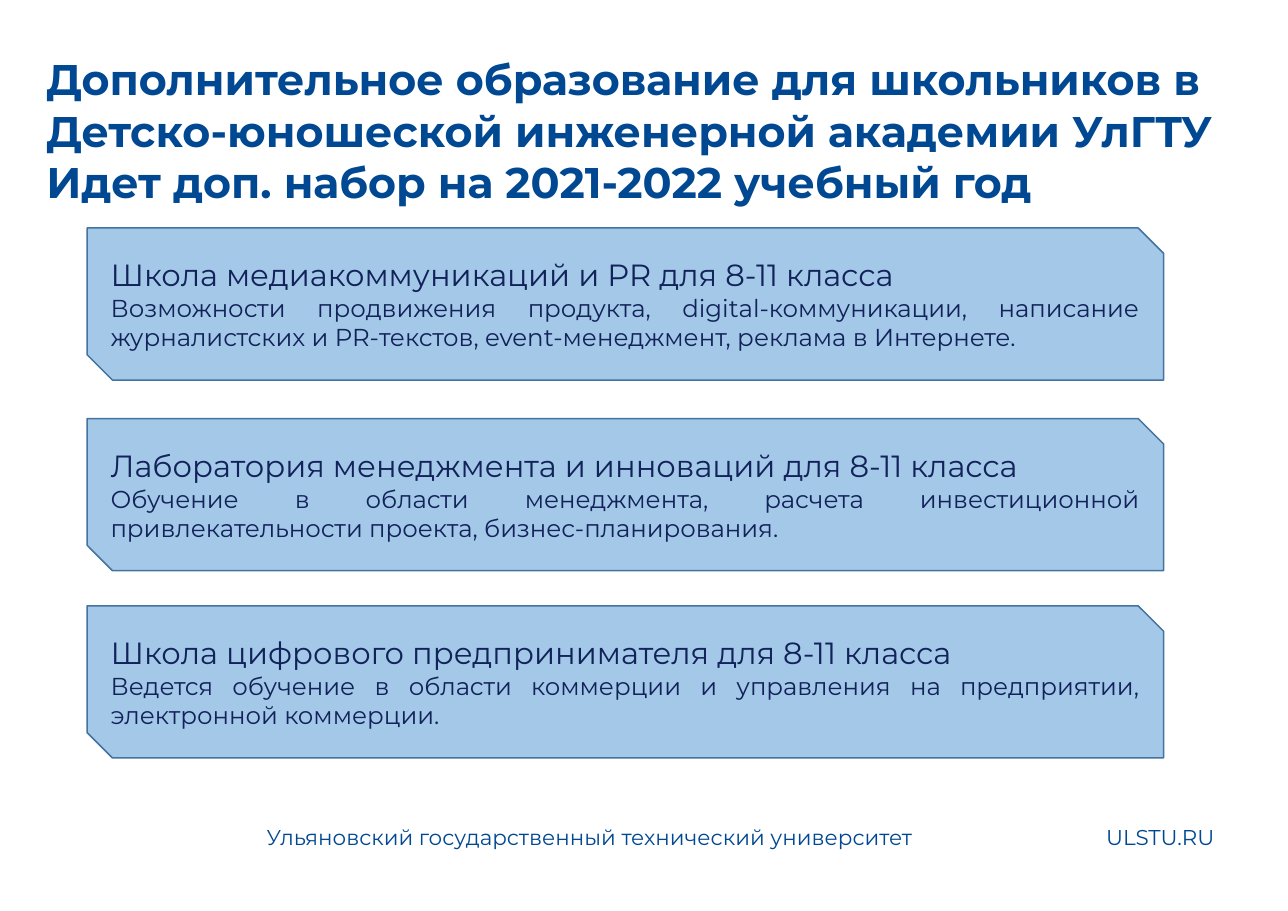
from dataclasses import dataclass

from lxml.etree import SubElement
from pptx import Presentation
from pptx.dml.color import RGBColor
from pptx.enum.shapes import MSO_SHAPE as Shape
from pptx.enum.text import MSO_ANCHOR as Anchor, MSO_AUTO_SIZE as Fit, PP_ALIGN as Align
from pptx.oxml.ns import qn
from pptx.util import Inches, Pt

TITLE = [
    "Дополнительное образование для школьников в Детско-юношеской инженерной академии УлГТУ",
    "Идет доп. набор на 2021-2022 учебный год",
]
# Top edge (percent of slide height), heading, description
CARDS = [
    (25.03, "Школа медиакоммуникаций и PR для 8-11 класса",
     "Возможности продвижения продукта, digital-коммуникации, написание "
     "журналистских и PR-текстов, event-менеджмент, реклама в Интернете."),
    (45.95, "Лаборатория менеджмента и инноваций для 8-11 класса",
     "Обучение в области менеджмента, расчета инвестиционной "
     "привлекательности проекта, бизнес-планирования."),
    (66.51, "Школа цифрового предпринимателя для 8-11 класса",
     "Ведется обучение в области коммерции и управления на предприятии, "
     "электронной коммерции."),
]
# Left edge and width (percent of slide width), text
FOOTER = [
    (19.85, 53.04, "Ульяновский государственный технический университет"),
    (85.03, 11.98, "ULSTU.RU"),
]


@dataclass(frozen=True)
class Theme:
    font: str = "Montserrat"
    brand: str = "004892"
    ink: str = "12225A"
    fill: str = "5B9BD5"
    edge: str = "43739E"
    alpha: int = 55
    title: int = 28
    head: int = 20
    body: int = 16
    foot: int = 14


theme = Theme()
deck = Presentation()
deck.slide_width, deck.slide_height = Inches(11.69), Inches(8.27)


def area(left, top, width, height):
    """Turn percentages of the slide into lengths."""
    wide, high = deck.slide_width / 100, deck.slide_height / 100
    return [int(n) for n in (left * wide, top * high, width * wide, height * high)]


def write(frame, text, size, color=theme.brand, bold=False, align=Align.LEFT, first=True):
    """Put one paragraph into a text frame, the first or a further one."""
    para = frame.paragraphs[0] if first else frame.add_paragraph()
    para.alignment = align
    run = para.add_run()
    run.text = text
    font = run.font
    font.name, font.size, font.bold = theme.font, Pt(size), bold
    font.color.rgb = RGBColor.from_string(color)


def add_title(slide):
    title = slide.shapes.title
    title.left, title.top, title.width, title.height = area(2.74, 5.2, 95.47, 30.35)
    frame = title.text_frame
    frame.word_wrap, frame.auto_size = True, Fit.NONE
    frame.vertical_anchor = Anchor.TOP
    for row, text in enumerate(TITLE):
        write(frame, text, theme.title, bold=True, first=row == 0)


def add_card(slide, top, head, body):
    card = slide.shapes.add_shape(Shape.SNIP_2_DIAG_RECTANGLE, *area(6.76, top, 83.58, 16.69))
    card.shadow.inherit = False
    card.fill.solid()
    card.fill.fore_color.rgb = RGBColor.from_string(theme.fill)
    tint = card.fill._xPr.find(qn("a:solidFill"))[0]
    SubElement(tint, qn("a:alpha"), val=str(theme.alpha * 1000))
    card.line.color.rgb = RGBColor.from_string(theme.edge)
    card.line.width = Pt(1)
    frame = card.text_frame
    frame.word_wrap, frame.vertical_anchor = True, Anchor.MIDDLE
    write(frame, head, theme.head, color=theme.ink)
    write(frame, body, theme.body, color=theme.ink, align=Align.JUSTIFY, first=False)


def add_foot(slide, left, width, text):
    frame = slide.shapes.add_textbox(*area(left, 89.84, width, 4.72)).text_frame
    frame.word_wrap = True
    write(frame, text, theme.foot)


def main():
    slide = deck.slides.add_slide(deck.slide_layouts.get_by_name("Title Only"))
    add_title(slide)
    for note in FOOTER:
        add_foot(slide, *note)
    for card in CARDS:
        add_card(slide, *card)
    deck.save("out.pptx")


if __name__ == "__main__":
    main()
